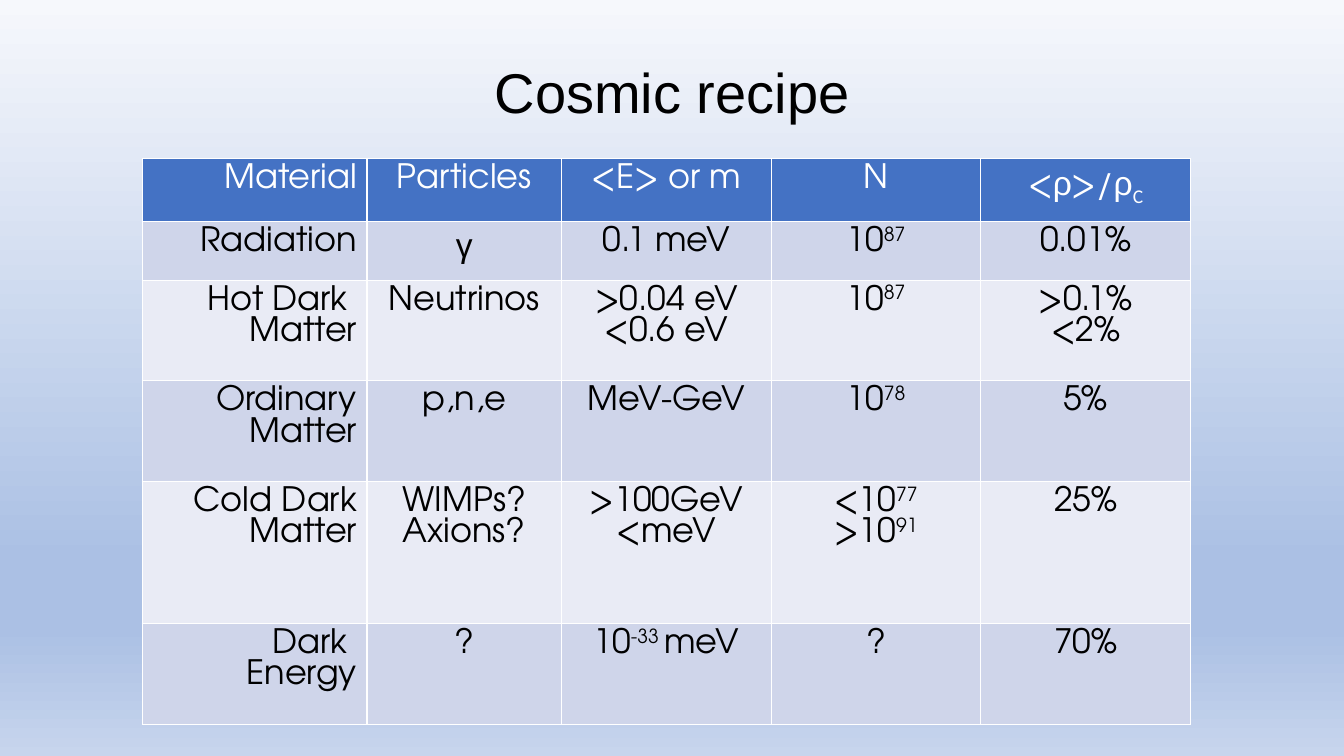
from dataclasses import dataclass

from lxml.etree import SubElement
from pptx import Presentation
from pptx.dml.color import RGBColor
from pptx.enum.text import MSO_ANCHOR, PP_ALIGN
from pptx.oxml.ns import qn
from pptx.slide import Slide
from pptx.table import _Cell
from pptx.text.text import _Paragraph
from pptx.util import Inches, Pt

SLIDE_WIDTH = Inches(13.33)
SLIDE_HEIGHT = Inches(7.5)
COLORS = {
    "title": "000000",
    "header": "4472C4",
    "header_text": "FFFFFF",
    "odd_row": "CFD5EA",
    "even_row": "E9EBF5",
    "body_text": "000000",
    "border": "FFFFFF",
}
BACKGROUND_STOPS = {0: "F6F8FC", 74: "ABC0E4", 83: "ABC0E4", 100: "C7D5ED"}
TABLE_FONT = "TeX Gyre Adventor"
GREEK_FONT = "Arial"
COLUMN_PERCENTS = (16.73, 14.48, 15.6, 15.6, 15.6)
ROW_PERCENTS = (8.4, 7.73, 13.33, 13.33, 18.8, 13.33)


@dataclass(frozen=True)
class Piece:
    """A run of text with its own baseline shift in percent, or its own font."""

    text: str
    baseline: int = 0
    font: str = TABLE_FONT


Line = tuple[Piece, ...]


@dataclass(frozen=True)
class Ingredient:
    """One table row: a tuple of lines for each column."""

    material: tuple[Line, ...]
    particles: tuple[Line, ...]
    energy: tuple[Line, ...]
    number: tuple[Line, ...]
    density: tuple[Line, ...]

    def cells(self) -> tuple[tuple[Line, ...], ...]:
        """Return the cells in column order."""
        return self.material, self.particles, self.energy, self.number, self.density


def plain(*texts: str) -> tuple[Line, ...]:
    """Make one single-piece line from each text."""
    return tuple((Piece(text),) for text in texts)


def power(base: str, exponent: str, unit: str = "") -> Line:
    """Make a line with a raised exponent and an optional unit."""
    pieces = (Piece(base), Piece(exponent, 30))
    return pieces + ((Piece(unit),) if unit else ())


RHO = Piece("ρ", font=GREEK_FONT)
DENSITY_RATIO = (Piece("<"), RHO, Piece(">/"), RHO, Piece("C", -25, "Calibri"))
RECIPE = (
    Ingredient(plain("Material"), plain("Particles"), plain("<E> or m"),
               plain("N"), (DENSITY_RATIO,)),
    Ingredient(plain("Radiation"), ((Piece("γ", font=GREEK_FONT),),), plain("0.1 meV"),
               (power("10", "87"),), plain("0.01%")),
    Ingredient(plain("Hot Dark ", "Matter"), plain("Neutrinos"),
               plain(">0.04 eV", "<0.6 eV"), (power("10", "87"),), plain(">0.1%", "<2%")),
    Ingredient(plain("Ordinary", "Matter"), plain("p,n,e"), plain("MeV-GeV"),
               (power("10", "78"),), plain("5%")),
    Ingredient(plain("Cold Dark", "Matter"), plain("WIMPs?", "Axions?"),
               plain(">100GeV", "<meV"), (power("<10", "77"), power(">10", "91")),
               plain("25%")),
    Ingredient(plain("Dark ", "Energy"), plain("?"), (power("10", "-33 ", "meV"),),
               plain("?"), plain("70%")),
)


def across(percent: float) -> int:
    """Convert a percentage of the slide width to a length."""
    return round(SLIDE_WIDTH * percent / 100)


def down(percent: float) -> int:
    """Convert a percentage of the slide height to a length."""
    return round(SLIDE_HEIGHT * percent / 100)


def style_paragraph(paragraph: _Paragraph, font: str, size: float, color: str,
                    alignment: PP_ALIGN) -> None:
    """Set the font and alignment of a whole paragraph."""
    paragraph.alignment = alignment
    paragraph.font.name = font
    paragraph.font.size = Pt(size)
    paragraph.font.color.rgb = RGBColor.from_string(COLORS[color])


def paint_background(slide: Slide) -> None:
    """Fill the slide with a vertical gradient."""
    fill = slide.background.fill
    fill.gradient()
    fill.gradient_angle = 270
    stop_list = slide.element.find(".//" + qn("a:gsLst"))
    for stop in list(stop_list):
        stop_list.remove(stop)
    for position, color in BACKGROUND_STOPS.items():
        stop = SubElement(stop_list, qn("a:gs"), pos=str(position * 1000))
        SubElement(stop, qn("a:srgbClr"), val=color)


def add_title(slide: Slide) -> None:
    """Add the centred title."""
    title = slide.shapes.add_textbox(across(13.58), down(4.27), across(72.84), down(16.8))
    frame = title.text_frame
    frame.word_wrap = True
    frame.vertical_anchor = MSO_ANCHOR.MIDDLE
    frame.margin_left = frame.margin_right = Inches(0.05)
    paragraph = frame.paragraphs[0]
    paragraph.text = "Cosmic recipe"
    paragraph.line_spacing = 0.9
    style_paragraph(paragraph, "Arial", 40, "title", PP_ALIGN.CENTER)


def add_borders(cell: _Cell) -> None:
    """Draw a thin line on each side of a cell."""
    properties = cell._tc.get_or_add_tcPr()
    for side in ("a:lnL", "a:lnR", "a:lnT", "a:lnB"):
        line = SubElement(properties, qn(side), w=str(Pt(1)))
        SubElement(SubElement(line, qn("a:solidFill")), qn("a:srgbClr"), val=COLORS["border"])


def fill_cell(cell: _Cell, lines: tuple[Line, ...], fill: str, text_color: str,
              alignment: PP_ALIGN) -> None:
    """Write the lines of a cell and colour it."""
    add_borders(cell)
    cell.fill.solid()
    cell.fill.fore_color.rgb = RGBColor.from_string(COLORS[fill])
    frame = cell.text_frame
    for index, line in enumerate(lines):
        paragraph = frame.add_paragraph() if index else frame.paragraphs[0]
        fonts = {piece.font for piece in line}
        shared_font = line[0].font if len(fonts) == 1 else TABLE_FONT
        style_paragraph(paragraph, shared_font, 24, text_color, alignment)
        for piece in line:
            run = paragraph.add_run()
            run.text = piece.text
            if piece.font != shared_font:
                run.font.name = piece.font
            if piece.baseline:
                run._r.get_or_add_rPr().set("baseline", str(piece.baseline * 1000))


def add_recipe_table(slide: Slide) -> None:
    """Add the table of ingredients."""
    table = slide.shapes.add_table(
        len(RECIPE), len(COLUMN_PERCENTS), across(10.58), down(20.93),
        across(sum(COLUMN_PERCENTS)), down(sum(ROW_PERCENTS))).table
    table.first_row = table.horz_banding = False
    for column, percent in zip(table.columns, COLUMN_PERCENTS):
        column.width = across(percent)
    for row_index, (ingredient, percent) in enumerate(zip(RECIPE, ROW_PERCENTS)):
        table.rows[row_index].height = down(percent)
        fill = ("odd_row" if row_index % 2 else "even_row") if row_index else "header"
        text_color = "body_text" if row_index else "header_text"
        for column_index, lines in enumerate(ingredient.cells()):
            alignment = PP_ALIGN.CENTER if column_index else PP_ALIGN.RIGHT
            fill_cell(table.cell(row_index, column_index), lines, fill, text_color, alignment)


def main() -> None:
    """Build and save the slide."""
    presentation = Presentation()
    presentation.slide_width = SLIDE_WIDTH
    presentation.slide_height = SLIDE_HEIGHT
    slide = presentation.slides.add_slide(presentation.slide_layouts[6])
    paint_background(slide)
    add_title(slide)
    add_recipe_table(slide)
    presentation.save("out.pptx")


if __name__ == "__main__":
    main()
